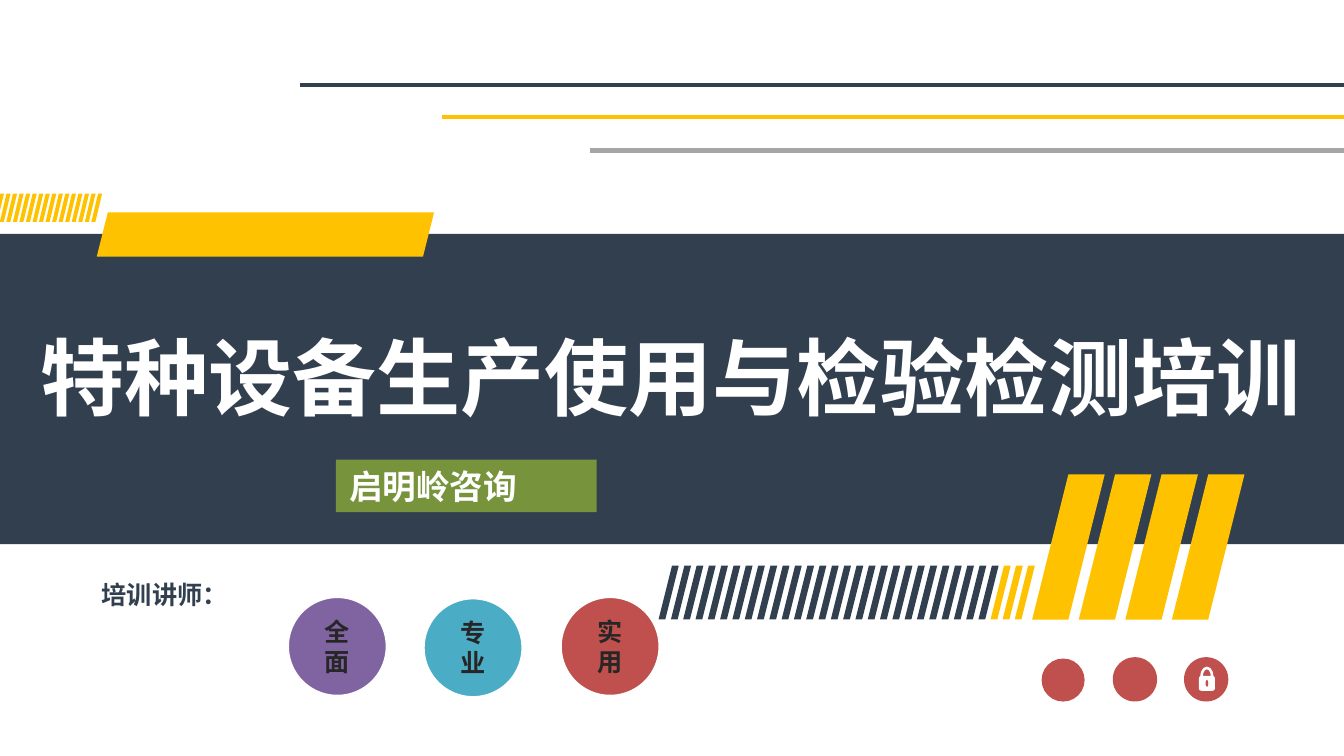
from dataclasses import dataclass

from lxml.etree import SubElement
from pptx import Presentation
from pptx.dml.color import RGBColor
from pptx.enum.shapes import MSO_CONNECTOR, MSO_SHAPE
from pptx.enum.text import MSO_ANCHOR, PP_ALIGN
from pptx.oxml.ns import qn
from pptx.util import Inches, Pt

NAVY = RGBColor(0x31, 0x3F, 0x4F)
YELLOW = RGBColor(0xFF, 0xC2, 0x00)
GRAY = RGBColor(0xA6, 0xA6, 0xA6)
GREEN = RGBColor(0x77, 0x93, 0x3C)
PURPLE = RGBColor(0x80, 0x64, 0xA2)
TEAL = RGBColor(0x4B, 0xAC, 0xC6)
RED = RGBColor(0xC0, 0x50, 0x4D)
WHITE = RGBColor(0xFF, 0xFF, 0xFF)
INK = RGBColor(0x26, 0x26, 0x26)
CJK_FONT = "Noto Sans CJK SC"


@dataclass
class Rule:
    left: float
    top: float
    color: RGBColor


@dataclass
class StripeRow:
    first: float
    last: float
    count: int
    top: float
    height: float
    bar: float
    lean: float
    color: RGBColor


@dataclass
class Badge:
    text: str
    left: float
    top: float
    color: RGBColor


RULES = [Rule(2.23, 0.63, NAVY), Rule(3.29, 0.87, YELLOW), Rule(4.39, 1.12, GRAY)]
STRIPE_ROWS = [
    StripeRow(7.68, 8.72, 4, 3.53, 1.08, 0.27, 0.27, YELLOW),
    StripeRow(7.37, 7.55, 3, 4.21, 0.4, 0.05, 0.1, YELLOW),
    StripeRow(4.9, 7.28, 27, 4.21, 0.4, 0.05, 0.1, NAVY),
    StripeRow(-0.05, 0.68, 16, 1.44, 0.21, 0.03, 0.05, YELLOW),
]
BADGES = [
    Badge("全面", 2.14, 4.44, PURPLE),
    Badge("专业", 3.15, 4.45, TEAL),
    Badge("实用", 4.17, 4.44, RED),
]


def paint(shape, color: RGBColor) -> None:
    """Give a shape a flat fill without line or shadow."""
    shape.shadow.inherit = False
    shape.fill.solid()
    shape.fill.fore_color.rgb = color
    shape.line.fill.background()


def add_shape(slide, kind, left, top, width, height, color: RGBColor):
    """Add a flat preset shape."""
    shape = slide.shapes.add_shape(
        kind, Inches(left), Inches(top), Inches(width), Inches(height)
    )
    paint(shape, color)
    return shape


def write(shape, text: str, *, size: float, color: RGBColor, font: str = CJK_FONT,
          align=PP_ALIGN.LEFT, anchor=MSO_ANCHOR.TOP, spacing: float = 1.0) -> None:
    """Write one formatted bold paragraph into a shape."""
    frame = shape.text_frame
    frame.word_wrap = True
    frame.vertical_anchor = anchor
    paragraph = frame.paragraphs[0]
    paragraph.alignment = align
    paragraph.line_spacing = spacing
    run = paragraph.add_run()
    run.text = text
    run.font.size = Pt(size)
    run.font.bold = True
    run.font.color.rgb = color
    run.font.name = font
    properties = run.font._element
    SubElement(properties, qn("a:ea")).set("typeface", CJK_FONT)


def add_rule(slide, rule: Rule) -> None:
    """Draw a line from its start to the right edge."""
    line = slide.shapes.add_connector(
        MSO_CONNECTOR.STRAIGHT,
        Inches(rule.left), Inches(rule.top), Inches(10), Inches(rule.top),
    )
    line.line.color.rgb = rule.color
    line.line.width = Pt(2.25)
    SubElement(line._element.spPr, qn("a:effectLst"))


def add_stripes(slide, row: StripeRow) -> None:
    """Draw evenly spaced slanted bars."""
    pitch = (row.last - row.first) / (row.count - 1)
    bottom = row.top + row.height
    for index in range(row.count):
        left = row.first + index * pitch
        corners = [
            (left + row.lean, row.top),
            (left + row.lean + row.bar, row.top),
            (left + row.bar, bottom),
            (left, bottom),
        ]
        points = [(Inches(x), Inches(y)) for x, y in corners]
        builder = slide.shapes.build_freeform(*points[0])
        builder.add_line_segments(points[1:], close=True)
        paint(builder.convert_to_shape(), row.color)


def add_badge(slide, badge: Badge) -> None:
    """Draw a labelled circle with a white outline."""
    circle = add_shape(
        slide, MSO_SHAPE.OVAL, badge.left, badge.top, 0.74, 0.74, badge.color
    )
    circle.line.color.rgb = WHITE
    circle.line.width = Pt(1.5)
    write(circle, badge.text, size=13.5, color=INK, font="Arial",
          align=PP_ALIGN.CENTER, anchor=MSO_ANCHOR.MIDDLE)


def add_icons(slide) -> None:
    """Draw the row of round icons, the last one with a padlock."""
    for left, top, size in [(7.75, 4.9, 0.32), (8.28, 4.89, 0.33), (8.81, 4.89, 0.33)]:
        add_shape(slide, MSO_SHAPE.OVAL, left, top, size, size, RED)
    shackle = add_shape(slide, MSO_SHAPE.BLOCK_ARC, 8.93, 4.96, 0.1, 0.15, WHITE)
    shackle.adjustments[2] = 0.2
    add_shape(slide, MSO_SHAPE.ROUNDED_RECTANGLE, 8.92, 5.03, 0.12, 0.11, WHITE)
    add_shape(slide, MSO_SHAPE.OVAL, 8.97, 5.06, 0.02, 0.05, RED)


def main() -> None:
    """Build the training cover slide."""
    presentation = Presentation()
    presentation.slide_width = Inches(10)
    presentation.slide_height = Inches(10) * 9 // 16
    slide = presentation.slides.add_slide(presentation.slide_layouts[5])

    add_shape(slide, MSO_SHAPE.RECTANGLE, 0, 1.74, 10, 2.31, NAVY)
    for rule in RULES:
        add_rule(slide, rule)
    add_shape(slide, MSO_SHAPE.PARALLELOGRAM, 0.72, 1.58, 2.51, 0.33, YELLOW)
    for row in STRIPE_ROWS:
        add_stripes(slide, row)

    title = slide.shapes.title
    title.left, title.top = Inches(0.2), Inches(2.22)
    title.width, title.height = Inches(10.01), Inches(0.93)
    write(title, "特种设备生产使用与检验检测培训", size=45, color=WHITE,
          align=PP_ALIGN.JUSTIFY, spacing=1.2)
    title.element.getparent().append(title.element)

    lecturer = slide.shapes.add_textbox(
        Inches(0.66), Inches(4.22), Inches(1.71), Inches(0.38)
    )
    write(lecturer, "培训讲师：", size=13.5, color=NAVY, spacing=1.2)
    add_icons(slide)
    company = add_shape(slide, MSO_SHAPE.RECTANGLE, 2.5, 3.42, 1.94, 0.39, GREEN)
    write(company, "启明岭咨询", size=18, color=WHITE, align=PP_ALIGN.JUSTIFY)
    for badge in BADGES:
        add_badge(slide, badge)

    presentation.save("out.pptx")


if __name__ == "__main__":
    main()
